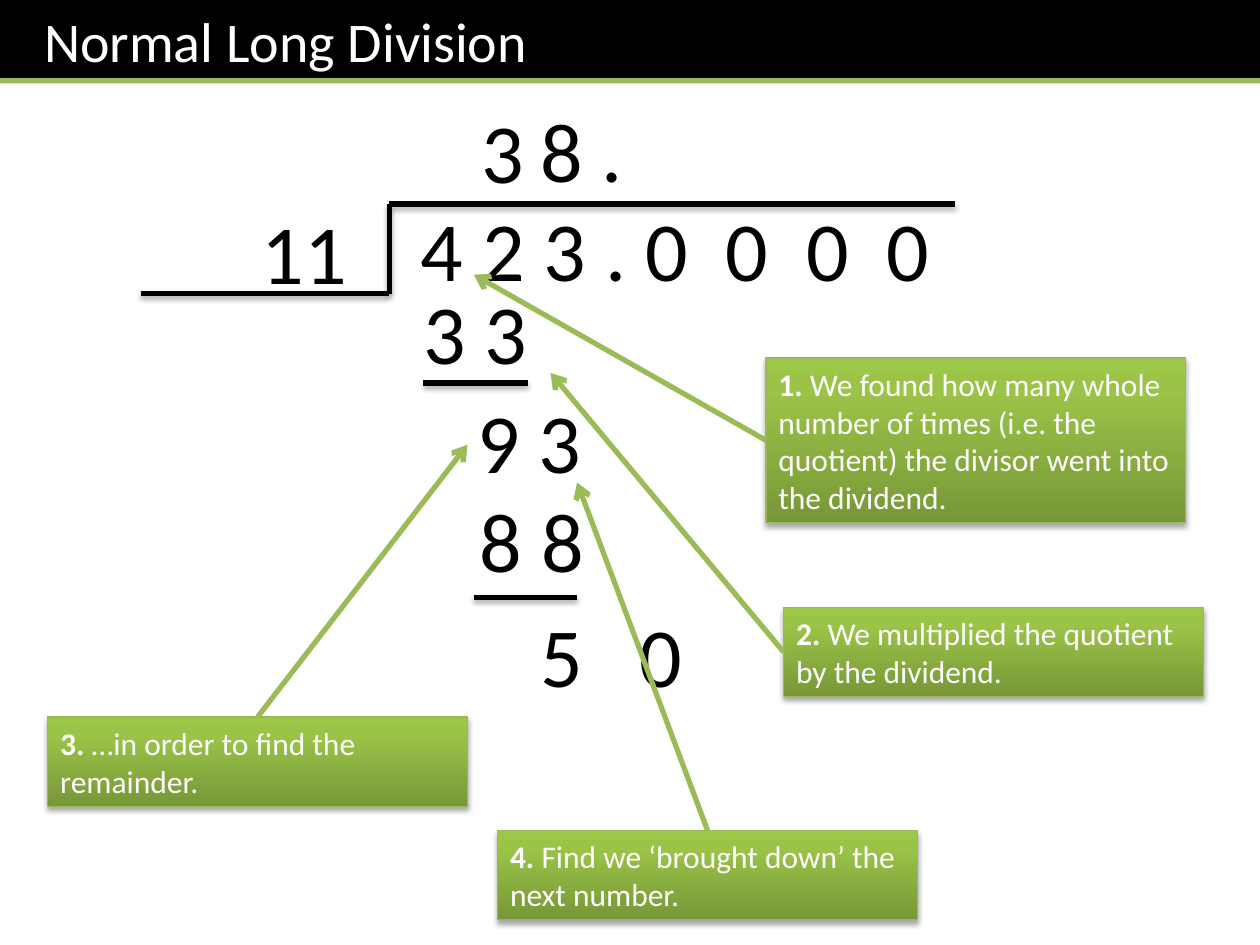
from lxml import etree
from pptx import Presentation
from pptx.dml.color import RGBColor
from pptx.enum.shapes import MSO_CONNECTOR, MSO_SHAPE
from pptx.enum.text import MSO_ANCHOR, MSO_AUTO_SIZE, PP_ALIGN
from pptx.oxml.ns import qn
from pptx.util import Inches, Pt

STRAIGHT = MSO_CONNECTOR.STRAIGHT
RECT = MSO_SHAPE.RECTANGLE
LEFT = PP_ALIGN.LEFT
TOP, MIDDLE = MSO_ANCHOR.TOP, MSO_ANCHOR.MIDDLE
GROW, FIXED = MSO_AUTO_SIZE.SHAPE_TO_FIT_TEXT, MSO_AUTO_SIZE.NONE

BLACK = RGBColor(0x00, 0x00, 0x00)
WHITE = RGBColor(0xFF, 0xFF, 0xFF)
GREEN = RGBColor(0x9B, 0xBB, 0x59)
BORDER = RGBColor(0x98, 0xB9, 0x55)
GRADIENT = [(0, "779737"), (80, "9BC348"), (100, "9DC746")]
FONT = "Calibri"

# Content
TITLE = "Normal Long Division"
DIGITS = [  # text, left, top, width, tab stops
    ("4 2 3 . 0\t0\t0\t0", 3.24, 1.52, 4.33, [2.42, 3.06, 3.7]),
    ("11", 1.98, 1.54, 1.1, []),
    ("3", 3.72, 0.74, 0.55, []),
    ("8 .", 4.19, 0.73, 1.21, []),
    ("3 3", 3.26, 2.18, 1.33, []),
    ("9 3", 3.69, 3.04, 1.29, []),
    ("8 8", 3.71, 3.83, 1.29, []),
    ("5\t0", 4.19, 4.74, 1.89, [0.79]),
]
RULES = [  # start, end
    ((1.12, 2.33), (3.09, 2.33)),
    ((3.09, 2.33), (3.09, 1.62)),
    ((3.09, 1.62), (7.58, 1.62)),
    ((3.36, 3.04), (4.19, 3.04)),
    ((3.76, 4.74), (4.58, 4.74)),
]
NOTE_W = 3.33
NOTES = [  # text, left, top, height, side the arrow leaves from, arrow tip
    ("We found how many whole number of times (i.e. the quotient) "
     "the divisor went into the dividend.", 6.08, 2.84, 1.31, "left", (3.76, 2.18)),
    ("We multiplied the quotient by the dividend.",
     6.22, 4.82, 0.71, "left", (4.37, 2.96)),
    ("…in order to find the remainder.", 0.38, 5.69, 0.71, "top", (3.71, 3.53)),
    ("Find we ‘brought down’ the next number.",
     3.95, 6.59, 0.71, "top", (4.58, 3.83)),
]


def add_run(p, text, size, color, bold=False):
    r = p.add_run()
    r.text = text
    r.font.name, r.font.size, r.font.bold = FONT, Pt(size), bold
    r.font.color.rgb = color


def sub(parent, tag, **attrs):
    return etree.SubElement(parent, qn(tag), attrs)


def add_effects(sp, shadow):
    effects = sub(sp._element.spPr, "a:effectLst")
    if shadow:
        outer = sub(effects, "a:outerShdw", blurRad="40000", dist="23000",
                    dir="5400000", rotWithShape="0")
        sub(sub(outer, "a:srgbClr", val="000000"), "a:alpha", val="35000")


def add_line(s, start, end, color, shadow=False, arrow=False):
    line = s.shapes.add_connector(STRAIGHT, *map(Inches, start + end))
    line.line.color.rgb = color
    line.line.width = Pt(3)
    if arrow:
        sub(line.line._get_or_add_ln(), "a:tailEnd", type="arrow")
    add_effects(line, shadow)


def add_digits(s, text, left, top, width, tabs):
    tf = s.shapes.add_textbox(*map(Inches, (left, top, width, 0.91))).text_frame
    tf.word_wrap, tf.auto_size = True, GROW
    p = tf.paragraphs[0]
    add_run(p, text, 48, BLACK)
    if tabs:
        stops = sub(p._p.get_or_add_pPr(), "a:tabLst")
        for pos in tabs:
            sub(stops, "a:tab", pos=str(Inches(pos)), algn="l")


def add_note(s, number, text, left, top, height, side, tip):
    sp = s.shapes.add_shape(RECT, *map(Inches, (left, top, NOTE_W, height)))
    sp.line.color.rgb = BORDER
    sp.line.width = Pt(0.75)
    grad = etree.Element(qn("a:gradFill"), rotWithShape="1")
    stops = sub(grad, "a:gsLst")
    for pos, color in GRADIENT:
        sub(sub(stops, "a:gs", pos=str(pos * 1000)), "a:srgbClr", val=color)
    sub(grad, "a:lin", ang="16200000", scaled="0")
    sp._element.spPr.find(qn("a:ln")).addprevious(grad)
    add_effects(sp, shadow=True)

    tf = sp.text_frame
    tf.word_wrap, tf.auto_size, tf.vertical_anchor = True, GROW, MIDDLE
    p = tf.paragraphs[0]
    p.alignment = LEFT
    add_run(p, f"{number}. ", 18, WHITE, bold=True)
    add_run(p, text, 18, WHITE)

    start = (left, top + height / 2) if side == "left" else (left + NOTE_W / 2, top)
    add_line(s, start, tip, GREEN, arrow=True)


def add_title(s):
    sp = s.shapes.title
    sp.left, sp.top, sp.width, sp.height = map(Inches, (0, 0, 10, 0.66))
    sp.fill.solid()
    sp.fill.fore_color.rgb = BLACK
    tf = sp.text_frame
    tf.word_wrap, tf.auto_size, tf.vertical_anchor = True, FIXED, TOP
    tf.margin_left, tf.margin_right = Inches(0.35), Inches(0.1)
    tf.margin_top = tf.margin_bottom = Inches(0.05)
    p = tf.paragraphs[0]
    p.alignment = LEFT
    add_run(p, TITLE, 32, WHITE)
    add_line(s, (0, 0.64), (10, 0.64), GREEN)


def main():
    prs = Presentation()
    prs.slide_width, prs.slide_height = Inches(10), Inches(7.5)
    s = prs.slides.add_slide(prs.slide_layouts[5])

    add_title(s)
    # Long division working
    for start, end in RULES:
        add_line(s, start, end, BLACK, shadow=True)
    for row in DIGITS:
        add_digits(s, *row)
    # Numbered notes with arrows
    for number, note in enumerate(NOTES, 1):
        add_note(s, number, *note)

    prs.save("out.pptx")


if __name__ == "__main__":
    main()
